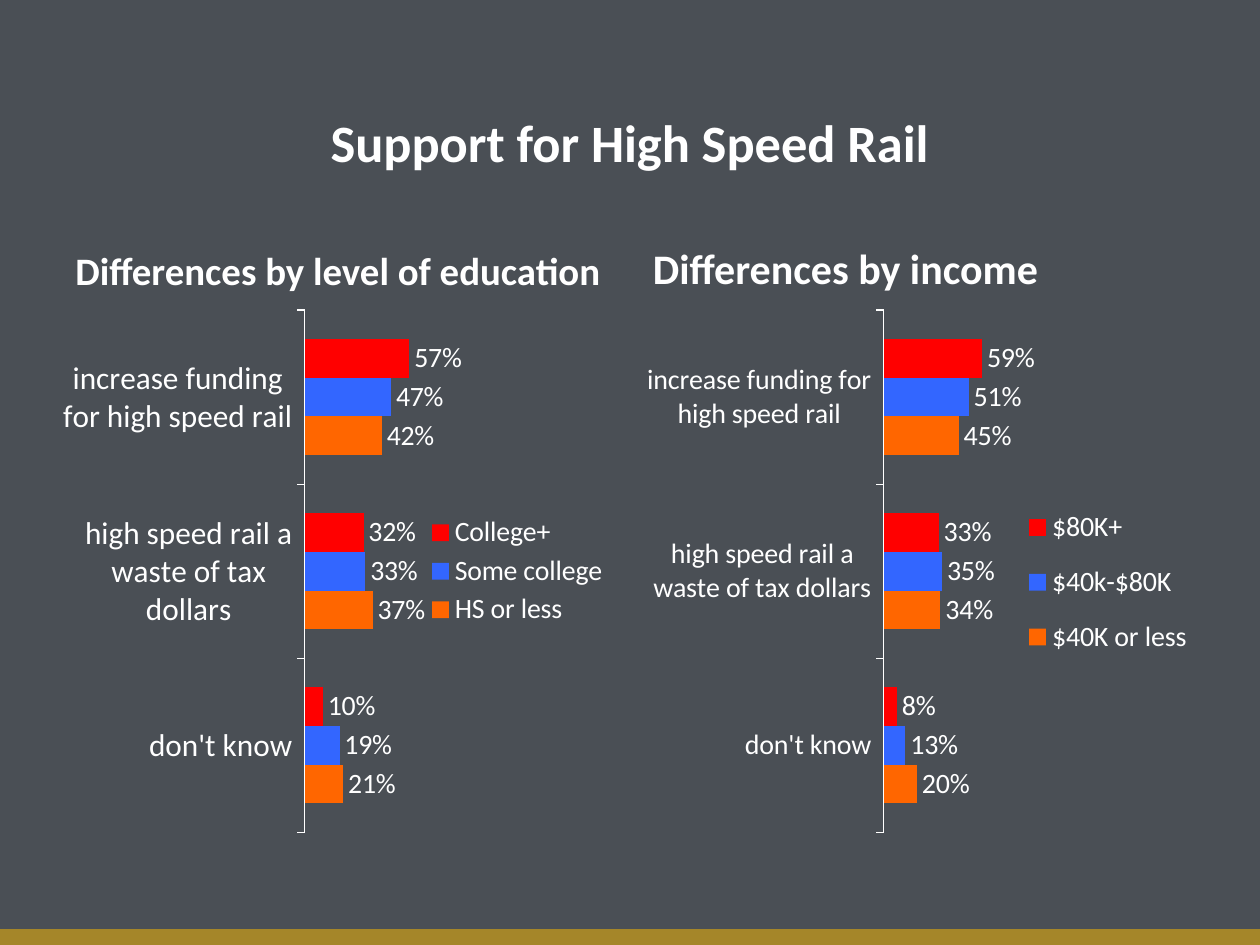
from lxml import etree
from pptx import Presentation
from pptx.chart.data import CategoryChartData
from pptx.dml.color import RGBColor
from pptx.enum import chart as chart_enum, shapes, text
from pptx.util import Pt

FONT = "Calibri"
WHITE, GOLD, SLATE = "FFFFFF", "A58629", "4A4F55"
SERIES_COLORS = ["FF6600", "3366FF", "FF0000"]
CATEGORIES = ["don't know", "high speed rail a waste of tax dollars",
              "increase funding for high speed rail"]
# Layouts are x, y, width, height as fractions of the chart.
PANELS = [
    dict(left=36, heading="Differences by level of education", heading_size=22.2,
         axis_size=18, maximum=0.6,
         plot=(0.43, 0.02, 0.2, 0.96), legend=(0.65, 0.39, 0.33, 0.22),
         series={"HS or less": (0.21, 0.37, 0.42),
                 "Some college": (0.19, 0.33, 0.47),
                 "College+": (0.10, 0.32, 0.57)}),
    dict(left=366, heading="Differences by income", heading_size=24,
         axis_size=16, maximum=0.7,
         plot=(0.437, 0.02, 0.21, 0.96), legend=(0.68, 0.35, 0.32, 0.34),
         series={"$40K or less": (0.20, 0.34, 0.45),
                 "$40k-$80K": (0.13, 0.35, 0.51),
                 "$80K+": (0.08, 0.33, 0.59)}),
]


def format_text(shape, content, size, align, anchor, color=WHITE):
    frame = shape.text_frame
    frame.word_wrap = True
    frame.vertical_anchor = anchor
    paragraph = frame.paragraphs[0]
    paragraph.alignment = align
    run = paragraph.add_run()
    run.text = content
    run.font.name, run.font.size, run.font.bold = FONT, Pt(size), True
    run.font.color.rgb = RGBColor.from_string(color)


def manual_layout(fractions, inner=False):
    """Return a c:layout element placing a chart part by fractions."""
    namespace = "{http://schemas.openxmlformats.org/drawingml/2006/chart}"
    layout = etree.Element(namespace + "layout")
    manual = etree.SubElement(layout, namespace + "manualLayout")
    settings = [("layoutTarget", "inner")] if inner else []
    settings += [("xMode", "edge"), ("yMode", "edge")]
    settings += zip("xywh", fractions)
    for tag, value in settings:
        etree.SubElement(manual, namespace + tag, val=str(value))
    return layout


presentation = Presentation()
presentation.slide_width, presentation.slide_height = Pt(720), Pt(540)
slide = presentation.slides.add_slide(presentation.slide_layouts[5])
slide.background.fill.solid()
slide.background.fill.fore_color.rgb = RGBColor.from_string(SLATE)

footer_bar = slide.shapes.add_shape(
    shapes.MSO_SHAPE.RECTANGLE, Pt(0), Pt(531), Pt(720), Pt(9))
footer_bar.shadow.inherit = False
footer_bar.fill.solid()
footer_bar.fill.fore_color.rgb = RGBColor.from_string(GOLD)
footer_bar.line.color.rgb = RGBColor.from_string(GOLD)
footer_bar.line.width = Pt(0.75)

title = slide.shapes.title
title.left, title.top, title.width, title.height = Pt(36), Pt(50), Pt(648), Pt(62)
format_text(title, "Support for High Speed Rail", size=30,
            align=text.PP_ALIGN.CENTER, anchor=text.MSO_ANCHOR.MIDDLE)

for panel in PANELS:
    heading = slide.shapes.add_textbox(Pt(panel["left"]), Pt(121), Pt(318), Pt(50))
    format_text(heading, panel["heading"], size=panel["heading_size"],
                align=text.PP_ALIGN.LEFT, anchor=text.MSO_ANCHOR.BOTTOM)

    data = CategoryChartData(number_format="0%")
    data.categories = CATEGORIES
    for name, values in panel["series"].items():
        data.add_series(name, values)
    chart = slide.shapes.add_chart(
        chart_enum.XL_CHART_TYPE.BAR_CLUSTERED,
        Pt(panel["left"]), Pt(171), Pt(318), Pt(311), data).chart
    chart.has_title = False
    chart.font.name, chart.font.size = FONT, Pt(16)
    chart.font.color.rgb = RGBColor.from_string(WHITE)

    category_axis = chart.category_axis
    category_axis.has_major_gridlines = False
    category_axis.major_tick_mark = chart_enum.XL_TICK_MARK.OUTSIDE
    category_axis.format.line.color.rgb = RGBColor.from_string(WHITE)
    category_axis.tick_labels.font.size = Pt(panel["axis_size"])
    value_axis = chart.value_axis
    value_axis.has_major_gridlines = False
    value_axis.minimum_scale, value_axis.maximum_scale = 0, panel["maximum"]
    value_axis.tick_labels.number_format = "0%"
    value_axis.tick_labels.number_format_is_linked = False
    value_axis.visible = False

    plot = chart.plots[0]
    plot.gap_width, plot.overlap = 150, 0
    plot.vary_by_categories = False
    for series, color in zip(plot.series, SERIES_COLORS):
        series.format.fill.solid()
        series.format.fill.fore_color.rgb = RGBColor.from_string(color)
        labels = series.data_labels
        labels.show_value = True
        labels.number_format, labels.number_format_is_linked = "0%", False
        labels.position = chart_enum.XL_LABEL_POSITION.OUTSIDE_END

    chart.has_legend = True
    legend = chart.legend
    legend.position = chart_enum.XL_LEGEND_POSITION.RIGHT
    legend.include_in_layout = False
    legend.font.size = Pt(16)
    for tag, layout in [("plotArea", manual_layout(panel["plot"], inner=True)),
                        ("legend", manual_layout(panel["legend"]))]:
        part = chart.element.xpath(f".//c:{tag}")[0]
        for old_layout in part.xpath("./c:layout"):
            part.remove(old_layout)
        part.insert(0 if tag == "plotArea" else 1, layout)

presentation.save("out.pptx")
